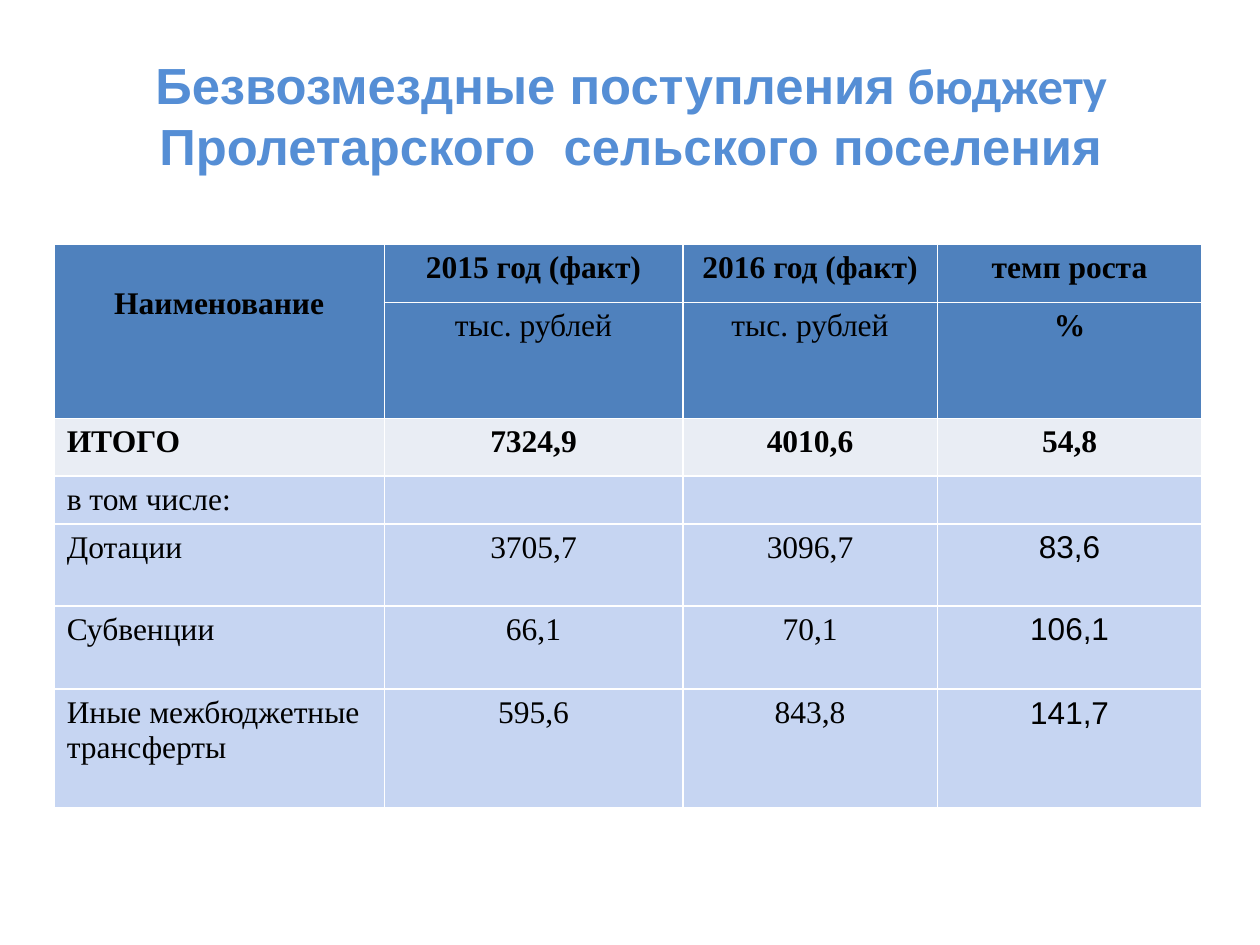
import pptx
import pptx.util
import pptx.dml.color
import pptx.enum.text
import pptx.oxml
import pptx.oxml.ns

Inches, Pt = pptx.util.Inches, pptx.util.Pt
ALIGN = pptx.enum.text.PP_ALIGN
SERIF, SANS = "Times New Roman", "Arial"
COLORS = {
    "title": "558ED5", "text": "000000", "border": "FFFFFF",
    "header": "4F81BD", "total": "E9EDF4", "body": "C6D5F2",
}
COLUMN_WIDTHS = [2.62, 2.37, 2.02, 2.1]
ROW_HEIGHTS = [0.46, 0.92, 0.46, 0.38, 0.65, 0.66, 0.94]
HEADER_ROWS, TOTAL_ROW = 2, 2
BUDGET = [
    ["Наименование", "2015 год (факт)", "2016 год (факт)", "темп роста"],
    ["", "тыс. рублей", "тыс. рублей", "%"],
    ["ИТОГО", "7324,9", "4010,6", "54,8"],
    ["в том числе:", "", "", ""],
    ["Дотации", "3705,7", "3096,7", "83,6"],
    ["Субвенции", "66,1", "70,1", "106,1"],
    ["Иные межбюджетные трансферты", "595,6", "843,8", "141,7"],
]


def rgb(name):
    return pptx.dml.color.RGBColor.from_string(COLORS[name])


def add_text(paragraph, text, size=18, font=SERIF, color="text", bold=False, align=ALIGN.CENTER):
    paragraph.alignment = align
    run = paragraph.add_run()
    run.text = text
    run.font.size = Pt(size)
    run.font.name = font
    run.font.bold = bold
    run.font.color.rgb = rgb(color)


def set_borders(cell, width=1):
    properties = cell._tc.get_or_add_tcPr()
    for side in ("lnL", "lnR", "lnT", "lnB"):
        properties.append(pptx.oxml.parse_xml(
            f'<a:{side} {pptx.oxml.ns.nsdecls("a")} w="{Pt(width)}"><a:solidFill>'
            f'<a:srgbClr val="{COLORS["border"]}"/></a:solidFill></a:{side}>'))


def add_title(slide):
    title = slide.shapes.title
    title.left, title.top = Inches(0.51), Inches(0.36)
    title.width, title.height = Inches(9), Inches(1.1)
    frame = title.text_frame
    frame.auto_size = pptx.enum.text.MSO_AUTO_SIZE.NONE
    frame.vertical_anchor = pptx.enum.text.MSO_ANCHOR.MIDDLE
    for text, font in [("Безвозмездные поступления", SANS), (" бюджету ", "Calibri"),
                       ("Пролетарского  сельского поселения", SANS)]:
        add_text(frame.paragraphs[0], text, size=29, font=font, color="title", bold=True)


def fill_cell(cell, row, column):
    text = BUDGET[row][column]
    set_borders(cell)
    band = "header" if row < HEADER_ROWS else "total" if row == TOTAL_ROW else "body"
    cell.fill.solid()
    cell.fill.fore_color.rgb = rgb(band)
    if not text:
        # Lets an empty cell stay as low as its row
        cell.margin_top = cell.margin_bottom = 0
        return
    add_text(
        cell.text_frame.paragraphs[0], text,
        font=SANS if row > TOTAL_ROW and column == 3 else SERIF,
        bold=row in (0, TOTAL_ROW) or text == "%",
        align=ALIGN.LEFT if column == 0 and row >= HEADER_ROWS else ALIGN.CENTER)


def add_budget_table(slide):
    table = slide.shapes.add_table(
        len(ROW_HEIGHTS), len(COLUMN_WIDTHS), Inches(0.43), Inches(1.94),
        Inches(sum(COLUMN_WIDTHS)), Inches(sum(ROW_HEIGHTS))).table
    for column, width in zip(table.columns, COLUMN_WIDTHS):
        column.width = Inches(width)
    for row, height in zip(table.rows, ROW_HEIGHTS):
        row.height = Inches(height)
    for row in range(len(BUDGET)):
        for column in range(len(COLUMN_WIDTHS)):
            fill_cell(table.cell(row, column), row, column)
    # The name heading spans both header rows, one line down
    name_heading = table.cell(0, 0)
    name_heading.merge(table.cell(1, 0))
    name_heading.margin_top = Inches(0.33)


def main():
    presentation = pptx.Presentation()
    presentation.slide_width, presentation.slide_height = Inches(10), Inches(7.5)
    slide = presentation.slides.add_slide(presentation.slide_layouts[5])
    add_title(slide)
    add_budget_table(slide)
    presentation.save("out.pptx")


if __name__ == "__main__":
    main()
